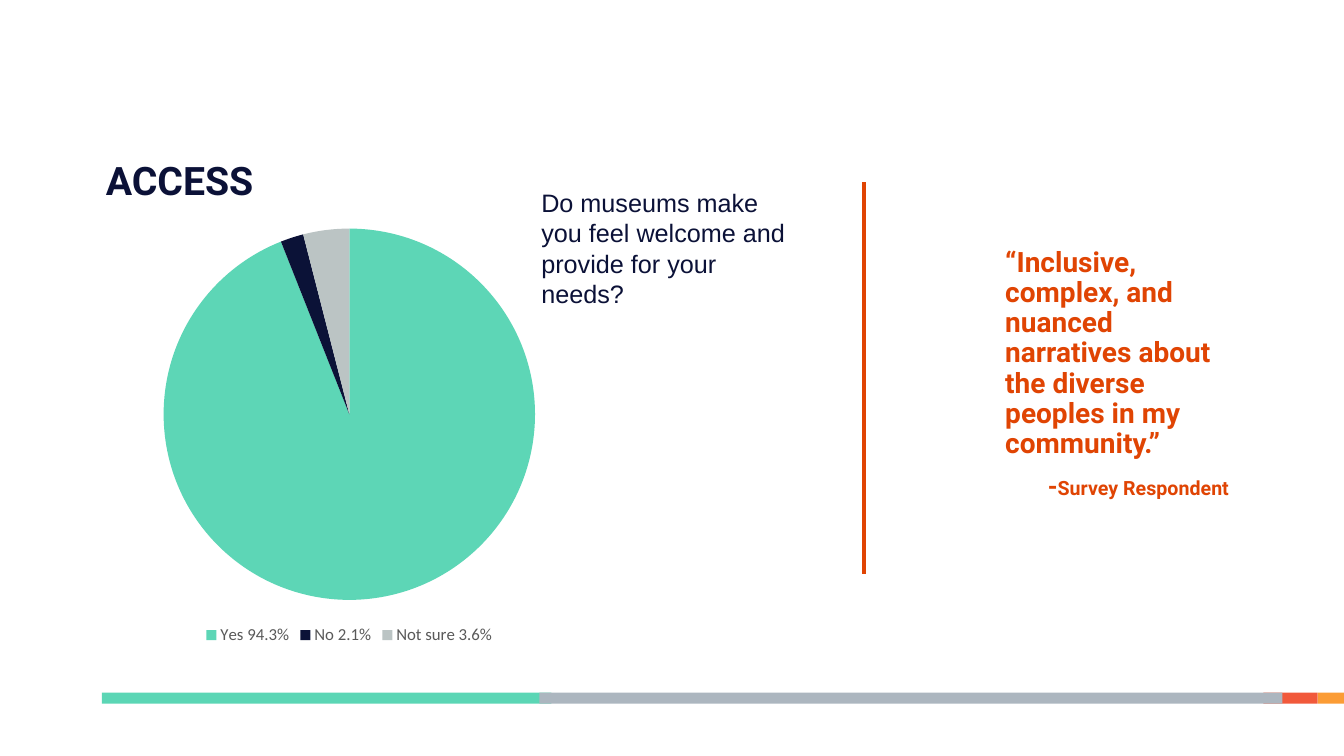
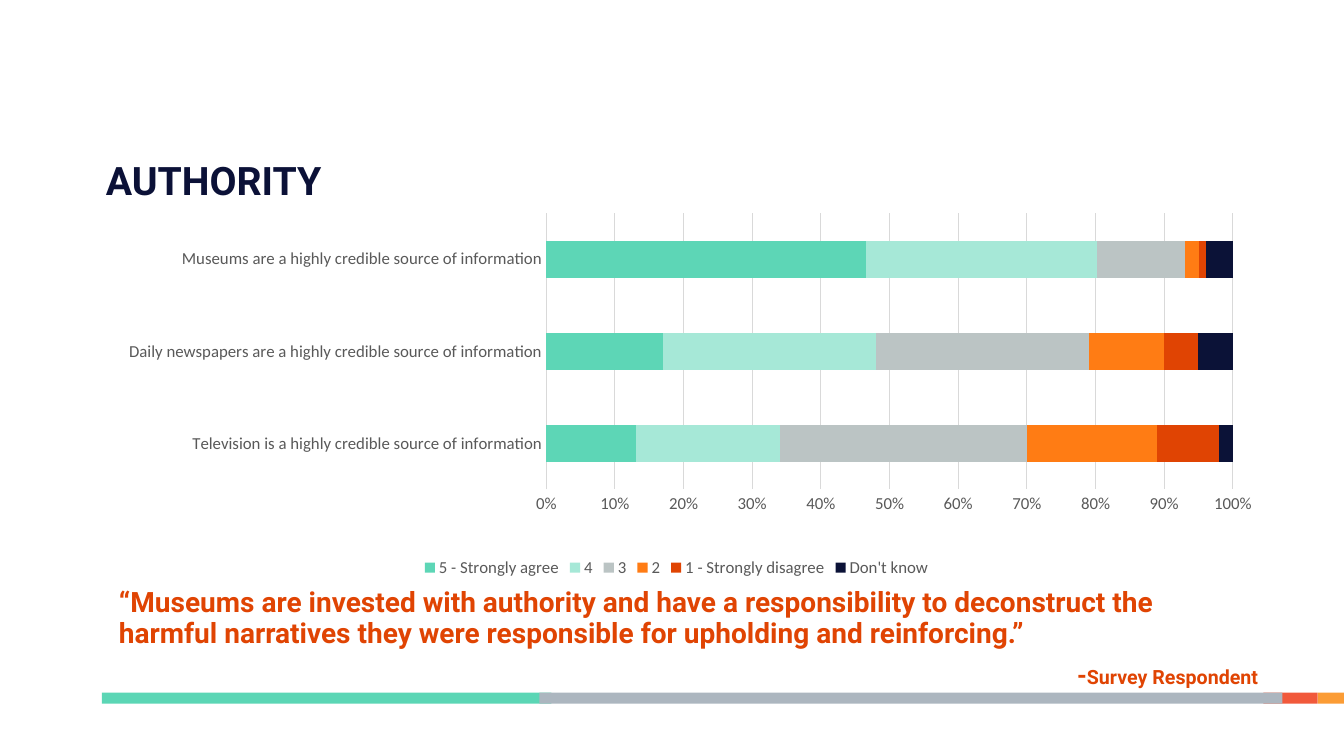
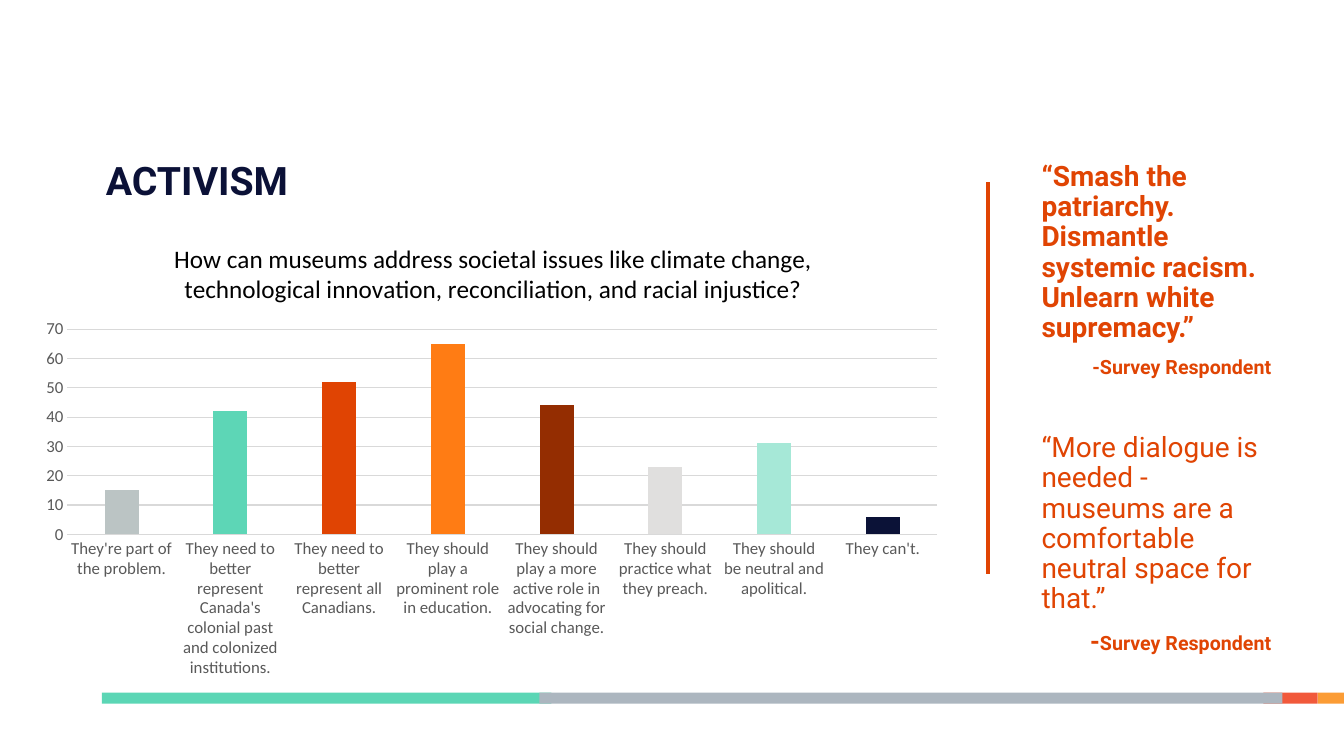
from dataclasses import dataclass

from pptx import Presentation
from pptx.chart.data import CategoryChartData
from pptx.dml.color import RGBColor
from pptx.enum.chart import XL_CHART_TYPE, XL_LEGEND_POSITION, XL_TICK_MARK
from pptx.enum.shapes import MSO_CONNECTOR, MSO_SHAPE
from pptx.enum.text import MSO_ANCHOR, MSO_AUTO_SIZE, PP_ALIGN
from pptx.oxml import parse_xml
from pptx.oxml.ns import nsdecls, qn
from pptx.oxml.xmlchemy import OxmlElement
from pptx.util import Inches, Pt


@dataclass(frozen=True)
class Theme:
    ink: str = "0B1137"
    quote: str = "E04403"
    label: str = "595959"
    grid: str = "D9D9D9"
    black: str = "000000"
    teal: str = "5DD6B6"
    mint: str = "A6E8D7"
    gray: str = "BBC4C4"
    pale: str = "E0DFDE"
    orange: str = "FF7C14"
    brown: str = "942D01"
    navy: str = "0B1237"
    head: str = "Roboto"
    text: str = "Arial"
    chart: str = "Calibri"
    title: int = 28
    large: int = 20
    mid: int = 18
    small: int = 14
    note: int = 12
    bands: tuple = (
        (1.01, 4.46, "5BD6B5"),
        (12.53, 0.54, "F1593B"),
        (5.35, 7.37, "ACB6BF"),
        (13.07, 0.26, "FB9C35"),
    )


def rgb(code):
    return RGBColor.from_string(code)


def put(item, **vals):
    for name, val in vals.items():
        setattr(item, name, val)


def ink(font, color, size, name, bold=False):
    put(font, size=Pt(size), name=name, bold=bold)
    font.color.rgb = rgb(color)


def paint(fill, color):
    fill.solid()
    fill.fore_color.rgb = rgb(color)


def place(shape, box):
    for name, val in zip(("left", "top", "width", "height"), box):
        setattr(shape, name, Inches(val))


class Deck:
    def __init__(self, theme):
        self.theme = theme
        self.file = Presentation()
        put(self.file, slide_width=Inches(13.33), slide_height=Inches(7.5))
        self.base = self.file.slide_layouts[1]
        self.slide = None

    def start(self, title):
        first = self.slide is None
        self.slide = self.file.slides.add_slide(self.base)
        if first:
            self.band()
        shape = self.slide.shapes.title
        place(shape, (1.05, 1.56, 11.5, 1))
        frame = shape.text_frame
        put(frame, margin_left=0, margin_right=Inches(0.08),
            margin_top=Inches(0.04), margin_bottom=Inches(0.04),
            vertical_anchor=MSO_ANCHOR.TOP, auto_size=MSO_AUTO_SIZE.NONE)
        para = frame.paragraphs[0]
        put(para, alignment=PP_ALIGN.LEFT, line_spacing=0.9)
        self.run(para, title, self.theme.ink, self.theme.title, self.theme.head, True)

    def band(self):
        """Draw the footer strip and move it to the layout all slides share."""
        for left, width, color in self.theme.bands:
            shape = self.slide.shapes.add_shape(
                MSO_SHAPE.RECTANGLE, Inches(left), Inches(6.87), Inches(width), Inches(0.11))
            shape.shadow.inherit = False
            paint(shape.fill, color)
            shape.line.fill.background()
            self.base.shapes.element.append(shape.element)

    def run(self, para, text, *style):
        run = para.add_run()
        run.text = text
        ink(run.font, *style)

    def quote(self, box, *items):
        """Fill the body with (words, bold, dash size) items, each one signed."""
        look = self.theme
        shape = self.slide.placeholders[1]
        place(shape, box)
        frame = shape.text_frame
        put(frame, vertical_anchor=MSO_ANCHOR.TOP, auto_size=MSO_AUTO_SIZE.NONE)
        for pos, (words, bold, dash) in enumerate(items):
            para = frame.add_paragraph() if pos else frame.paragraphs[0]
            self.plain(para, PP_ALIGN.LEFT, 39 if pos else 0)
            self.run(para, words, look.quote, look.large, look.head, bold)
            para = frame.add_paragraph()
            self.plain(para, PP_ALIGN.RIGHT, 10)
            self.run(para, "-", look.quote, dash, look.head, True)
            self.run(para, "Survey Respondent", look.quote, look.small, look.head, True)

    def plain(self, para, align, gap):
        """Set paragraph spacing and take the bullet off."""
        put(para, alignment=align, line_spacing=0.9, space_before=Pt(gap))
        props = para._p.get_or_add_pPr()
        for name in ("marL", "indent"):
            props.set(name, "0")
        props.append(OxmlElement("a:buNone"))

    def ask(self, text, box):
        """Add a survey question as free text."""
        frame = self.slide.shapes.add_textbox(*map(Inches, box)).text_frame
        put(frame, word_wrap=True, auto_size=MSO_AUTO_SIZE.SHAPE_TO_FIT_TEXT)
        self.run(frame.paragraphs[0], text, self.theme.ink, self.theme.mid, self.theme.text)

    def rule(self, left):
        line = self.slide.shapes.add_connector(
            MSO_CONNECTOR.STRAIGHT, Inches(left), Inches(1.81), Inches(left), Inches(5.69))
        line.line.width = Pt(3)
        line.line.color.rgb = rgb(self.theme.quote)
        line.element.spPr.append(OxmlElement("a:effectLst"))

    def chart(self, kind, box, cats, rows, legend=True):
        data = CategoryChartData()
        data.categories = cats
        for name, vals in rows:
            data.add_series(name, vals)
        chart = self.slide.shapes.add_chart(kind, *map(Inches, box), data).chart
        ink(chart.font, self.theme.label, self.theme.note, self.theme.chart)
        put(chart, has_title=False, has_legend=legend)
        if legend:
            put(chart.legend, position=XL_LEGEND_POSITION.BOTTOM, include_in_layout=False)
        return chart

    def bars(self, chart, gap, lap, top, step, form, area):
        put(chart.plots[0], gap_width=gap, overlap=lap, vary_by_categories=False)
        cat, val = chart.category_axis, chart.value_axis
        for axis in (cat, val):
            put(axis, major_tick_mark=XL_TICK_MARK.NONE, minor_tick_mark=XL_TICK_MARK.NONE)
        put(val, minimum_scale=0, maximum_scale=top, major_unit=step, has_major_gridlines=True)
        put(val.tick_labels, number_format=form, number_format_is_linked=False)
        val.format.line.fill.background()
        for line in (cat.format.line, val.major_gridlines.format.line):
            line.width = Pt(0.75)
            line.color.rgb = rgb(self.theme.grid)
        self.fit(chart, area)

    def fit(self, chart, area):
        """Pin the inner plot area, given as shares of the chart."""
        vals = "".join(f'<c:{name} val="{val}"/>' for name, val in zip("xywh", area))
        plot = chart.element.find(".//" + qn("c:plotArea"))
        for old in plot.findall(qn("c:layout")):
            plot.remove(old)
        plot.insert(0, parse_xml(
            f'<c:layout {nsdecls("c")}><c:manualLayout><c:layoutTarget val="inner"/>'
            f'<c:xMode val="edge"/><c:yMode val="edge"/>{vals}</c:manualLayout></c:layout>'))

    def dots(self, chart, colors):
        """Colour each point of the only series."""
        series = chart.plots[0].series[0]
        for pos, color in enumerate(colors):
            paint(series.points[pos].format.fill, color)

    def head(self, chart, text):
        chart.has_title = True
        title = chart.chart_title
        title.include_in_layout = False
        self.run(title.text_frame.paragraphs[0], text,
                 self.theme.black, self.theme.mid, self.theme.chart)


def access(deck):
    look = deck.theme
    deck.start("ACCESS")
    deck.quote((9.87, 2.41, 2.42, 2.67), (
        "“Inclusive, complex, and nuanced narratives about the diverse peoples "
        "in my community.”", True, look.mid))
    deck.ask("Do museums make you feel welcome and provide for your needs?",
             (5.27, 1.81, 2.62, 1.01))
    deck.rule(8.57)
    pie = deck.chart(XL_CHART_TYPE.PIE, (0.7, 2.13, 5.53, 4.31),
                     ("Yes 94.3%", "No 2.1%", "Not sure 3.6%"),
                     [("Series 1", (94, 2, 4))])
    pie.plots[0].vary_by_categories = True
    deck.dots(pie, (look.teal, look.navy, look.gray))


def trust(deck):
    look = deck.theme
    deck.start("AUTHORITY")
    deck.quote((1.08, 5.79, 11.5, 1.07), (
        "“Museums are invested with authority and have a responsibility to deconstruct "
        "the harmful narratives they were responsible for upholding and reinforcing.”",
        True, look.mid))
    rows = (
        ("5 - Strongly agree", (13, 17, 47), look.teal),
        ("4", (21, 31, 34), look.mint),
        ("3", (36, 31, 13), look.gray),
        ("2", (19, 11, 2), look.orange),
        ("1 - Strongly disagree", (9, 5, 1), look.quote),
        ("Don't know", (2, 5, 4), look.navy),
    )
    cats = [f"{name} a highly credible source of information"
            for name in ("Television is", "Daily newspapers are", "Museums are")]
    chart = deck.chart(XL_CHART_TYPE.BAR_STACKED_100, (0.84, 2.11, 11.74, 3.66),
                       cats, [row[:2] for row in rows])
    deck.bars(chart, 150, 100, 1, 0.1, "0%", (0.39, 0, 0.58, 0.75))
    for series, row in zip(chart.plots[0].series, rows):
        paint(series.format.fill, row[2])


def action(deck):
    look = deck.theme
    deck.start("ACTIVISM")
    deck.quote(
        (10.23, 1.56, 2.48, 4.36),
        ("“Smash the patriarchy. Dismantle systemic racism. Unlearn white supremacy.”",
         True, look.small),
        ("“More dialogue is needed - museums are a comfortable neutral space for that.”",
         False, look.mid))
    deck.rule(9.8)
    rows = (
        ("They're part of the problem.", 15, look.gray),
        ("They need to better represent Canada's colonial past and colonized institutions.",
         42, look.teal),
        ("They need to better represent all Canadians.", 52, look.quote),
        ("They should play a prominent role in education.", 65, look.orange),
        ("They should play a more active role in advocating for social change.",
         44, look.brown),
        ("They should practice what they preach.", 23, look.pale),
        ("They should be neutral and apolitical.", 31, look.mint),
        ("They can't.", 6, look.navy),
    )
    cats, vals, colors = zip(*rows)
    chart = deck.chart(XL_CHART_TYPE.COLUMN_CLUSTERED, (0.3, 2.2, 9.18, 4.63),
                       cats, [("Series 1", vals)], legend=False)
    deck.bars(chart, 219, -27, 70, 10, "General", (0.04, 0.23, 0.94, 0.44))
    deck.head(chart, "How can museums address societal issues like climate change, "
                     "technological innovation, reconciliation, and racial injustice?")
    deck.dots(chart, colors)


def main():
    deck = Deck(Theme())
    for build in (access, trust, action):
        build(deck)
    deck.file.save("out.pptx")


if __name__ == "__main__":
    main()
